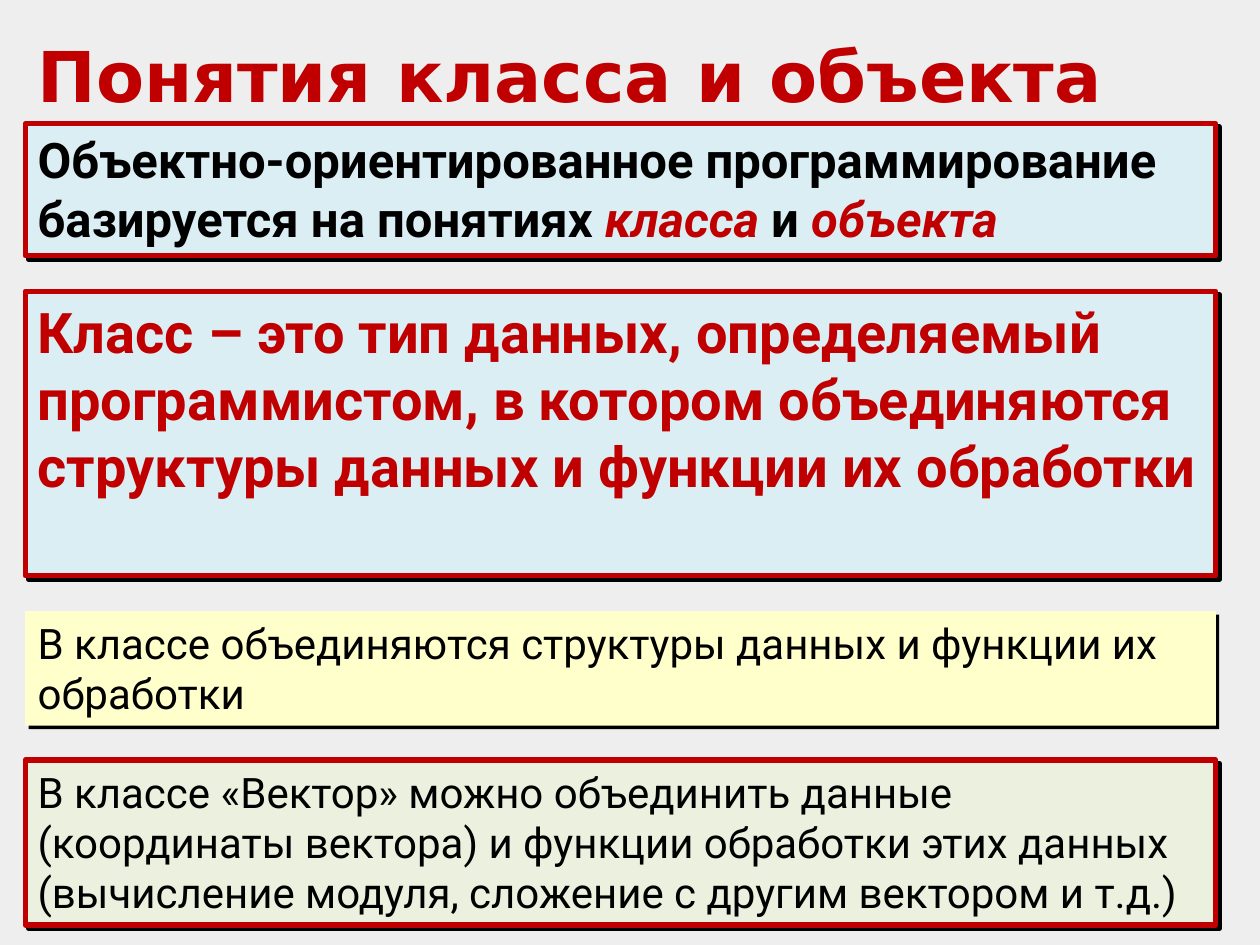
from lxml import etree
from pptx import Presentation
from pptx.dml.color import RGBColor
from pptx.enum.shapes import MSO_SHAPE
from pptx.enum.text import MSO_ANCHOR, PP_ALIGN
from pptx.oxml.ns import qn
from pptx.util import Cm, Pt

RECT = MSO_SHAPE.RECTANGLE
TOP = MSO_ANCHOR.TOP
LEFT = PP_ALIGN.LEFT

COLORS = {
    "back": "EEEEEE",
    "red": "C00000",
    "black": "000000",
    "blue": "DBEEF4",
    "green": "EBF1DE",
    "yellow": "FFFFCC",
}
EDGE = Cm(0.51)
WIDTH = Cm(24)


def color(name):
    return RGBColor.from_string(COLORS[name])


def write(shape, *runs, size=24, font="Roboto", bold=False, ink="black"):
    """Fill a shape with runs: plain strings, or (string,) for a key term."""
    frame = shape.text_frame
    frame.word_wrap = True
    frame.vertical_anchor = TOP
    para = frame.paragraphs[0]
    para.alignment = LEFT
    for item in runs:
        term = isinstance(item, tuple)
        run = para.add_run()
        run.text = item[0] if term else item
        run.font.name = font
        run.font.size = Pt(size)
        run.font.bold = bold
        run.font.italic = term
        run.font.color.rgb = color("red" if term else ink)


def shade(shape):
    """Add a hard black shadow to the lower right."""
    shape.shadow.inherit = False
    effects = shape._element.spPr.find(qn("a:effectLst"))
    drop = etree.SubElement(effects, qn("a:outerShdw"), dist=str(Pt(2.8)),
                            dir="2700000", algn="ctr", rotWithShape="0")
    etree.SubElement(drop, qn("a:srgbClr"), val=COLORS["black"])


def panel(slide, top, height, fill, framed=True):
    box = slide.shapes.add_shape(RECT, EDGE, Cm(top), WIDTH, Cm(height))
    box.fill.solid()
    box.fill.fore_color.rgb = color(fill)
    if framed:
        box.line.color.rgb = color("red")
        box.line.width = Pt(3)
    else:
        box.line.fill.background()
    shade(box)
    return box


def main():
    deck = Presentation()
    deck.slide_width, deck.slide_height = Cm(25.4), Cm(19.05)
    slide = deck.slides.add_slide(deck.slide_layouts[6])
    slide.background.fill.solid()
    slide.background.fill.fore_color.rgb = color("back")

    # Title
    title = slide.shapes.add_textbox(EDGE, Cm(0.53), Cm(24.41), Cm(1.96))
    write(title, "Понятия класса и объекта",
          size=40, font="DejaVu Sans", bold=True, ink="red")

    # Basis of the approach
    basis = panel(slide, 2.49, 2.67, "blue")
    write(basis, "Объектно-ориентированное программирование базируется на понятиях ",
          ("класса",), " и ", ("объекта",), size=28, bold=True)

    # Definition
    define = panel(slide, 5.87, 5.74, "blue")
    write(define, "Класс – это тип данных, определяемый программистом, "
          "в котором объединяются структуры данных и функции их обработки",
          size=32, bold=True, ink="red")

    # Example
    sample = panel(slide, 15.32, 3.33, "green")
    write(sample, "В классе «Вектор» можно объединить данные (координаты вектора) "
          "и функции обработки этих данных (вычисление модуля, "
          "сложение с другим вектором и т.д.)")

    # Summary
    recap = panel(slide, 12.32, 2.31, "yellow", framed=False)
    write(recap, "В классе объединяются структуры данных и функции их обработки")

    deck.save("out.pptx")


if __name__ == "__main__":
    main()
